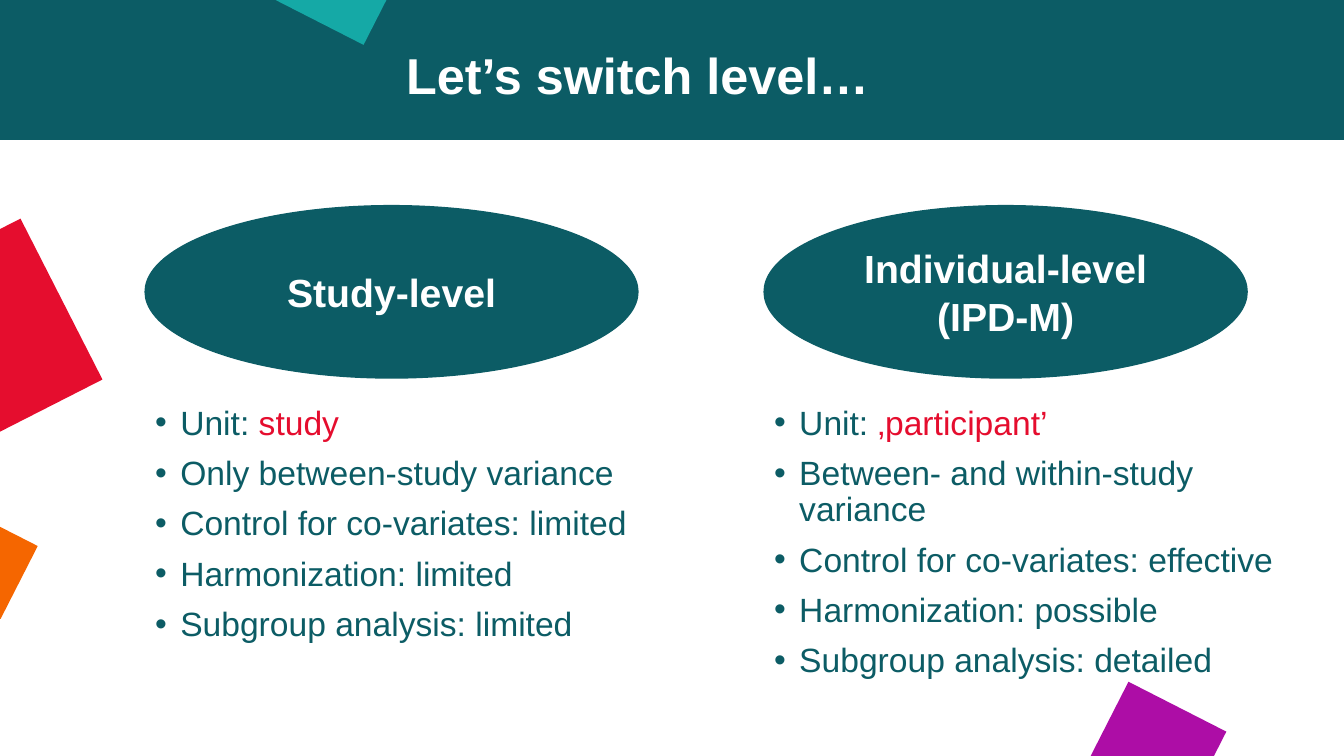
from lxml.etree import SubElement
from pptx import Presentation
from pptx.dml.color import RGBColor
from pptx.enum.shapes import MSO_SHAPE as SHAPE
from pptx.enum.text import MSO_ANCHOR as ANCHOR, MSO_AUTO_SIZE as AUTO, PP_ALIGN as ALIGN
from pptx.oxml.ns import qn
from pptx.util import Pt

TEAL, RED, WHITE = "0C5C65", "E50D2E", "FFFFFF"
TITLE = "Let’s switch level…"
BACKDROP = [
    ((0, 0, 960, 100), 0, TEAL),
    ((-78.5, 178.5, 129.5, 129), 333, RED),
    ((784, 500.5, 78.5, 78.5), 27, "AD0DA6"),
    ((-44, 373, 61, 58.5), 27, "F56600"),
    ((209.5, -52.5, 70.5, 72.5), 27, "15A9A6"),
]
LEVELS = [
    {"left": 103.7, "oval": 352, "list": 432.7, "name": "Study-level",
     "points": [[("Unit: ", TEAL), ("study", RED)],
                [("Only between-study variance", TEAL)],
                [("Control for co-variates: limited", TEAL)],
                [("Harmonization: limited", TEAL)],
                [("Subgroup analysis: limited", TEAL)]]},
    {"left": 545.8, "oval": 345, "list": 401.8, "name": "Individual-level\n(IPD-M)",
     "points": [[("Unit: ", TEAL), ("‚participant’", RED)],
                [("Between- and within-study variance", TEAL)],
                [("Control for co-variates: effective", TEAL)],
                [("Harmonization: possible", TEAL)],
                [("Subgroup analysis: detailed", TEAL)]]},
]
OVAL_TOP, OVAL_HEIGHT = 146.9, 123.1
LIST_TOP, LIST_HEIGHT = 286.6, 208.8
INDENT = 18


def rgb(value):
    return RGBColor.from_string(value)


def apply(target, **values):
    for key, value in values.items():
        setattr(target, key, value)


def style(r, size, color, bold):
    apply(r.font, name="Arial", size=Pt(size), bold=bold)
    r.font.color.rgb = rgb(color)


def headline(p, text, size):
    p.text = text
    p.alignment = ALIGN.CENTER
    for r in p.runs:
        style(r, size, WHITE, True)


def add_filled(s, kind, box, color):
    sp = s.shapes.add_shape(kind, *map(Pt, box))
    sp.shadow.inherit = False
    sp.fill.solid()
    sp.fill.fore_color.rgb = rgb(color)
    sp.line.fill.background()
    return sp


def add_oval(s, level):
    sp = add_filled(s, SHAPE.OVAL, (level["left"], OVAL_TOP, level["oval"], OVAL_HEIGHT), TEAL)
    sp.line.color.rgb = rgb(TEAL)
    sp.line.width = Pt(1)
    apply(sp.text_frame, word_wrap=True, vertical_anchor=ANCHOR.MIDDLE)
    headline(sp.text_frame.paragraphs[0], level["name"], 28)


def add_points(s, level):
    box = level["left"], LIST_TOP, level["list"], LIST_HEIGHT
    tf = s.shapes.add_textbox(*map(Pt, box)).text_frame
    tf.word_wrap = True
    for i, point in enumerate(level["points"]):
        p = tf.add_paragraph() if i else tf.paragraphs[0]
        apply(p, line_spacing=0.9, space_before=Pt(10 if i else 0))
        pPr = p._p.get_or_add_pPr()
        pPr.set("marL", str(Pt(INDENT)))
        pPr.set("indent", str(-Pt(INDENT)))
        SubElement(pPr, qn("a:buFont"), typeface="Arial")
        SubElement(pPr, qn("a:buChar"), char="•")
        for text, color in point:
            r = p.add_run()
            r.text = text
            style(r, 24, color, False)


def main():
    prs = Presentation()
    apply(prs, slide_width=Pt(960), slide_height=Pt(540))
    s = prs.slides.add_slide(prs.slide_layouts[5])
    title = s.shapes.title
    apply(title, left=Pt(193), top=Pt(33), width=Pt(525), height=Pt(29.5))
    apply(title.text_frame, word_wrap=True, vertical_anchor=ANCHOR.TOP, auto_size=AUTO.NONE)
    headline(title.text_frame.paragraphs[0], TITLE, 36)
    title.text_frame.paragraphs[0].line_spacing = 0.9
    for box, angle, color in BACKDROP:
        sp = add_filled(s, SHAPE.RECTANGLE, box, color)
        sp.rotation = angle
        title.element.addprevious(sp.element)
    for level in LEVELS:
        add_oval(s, level)
        add_points(s, level)
    prs.save("out.pptx")


if __name__ == "__main__":
    main()
